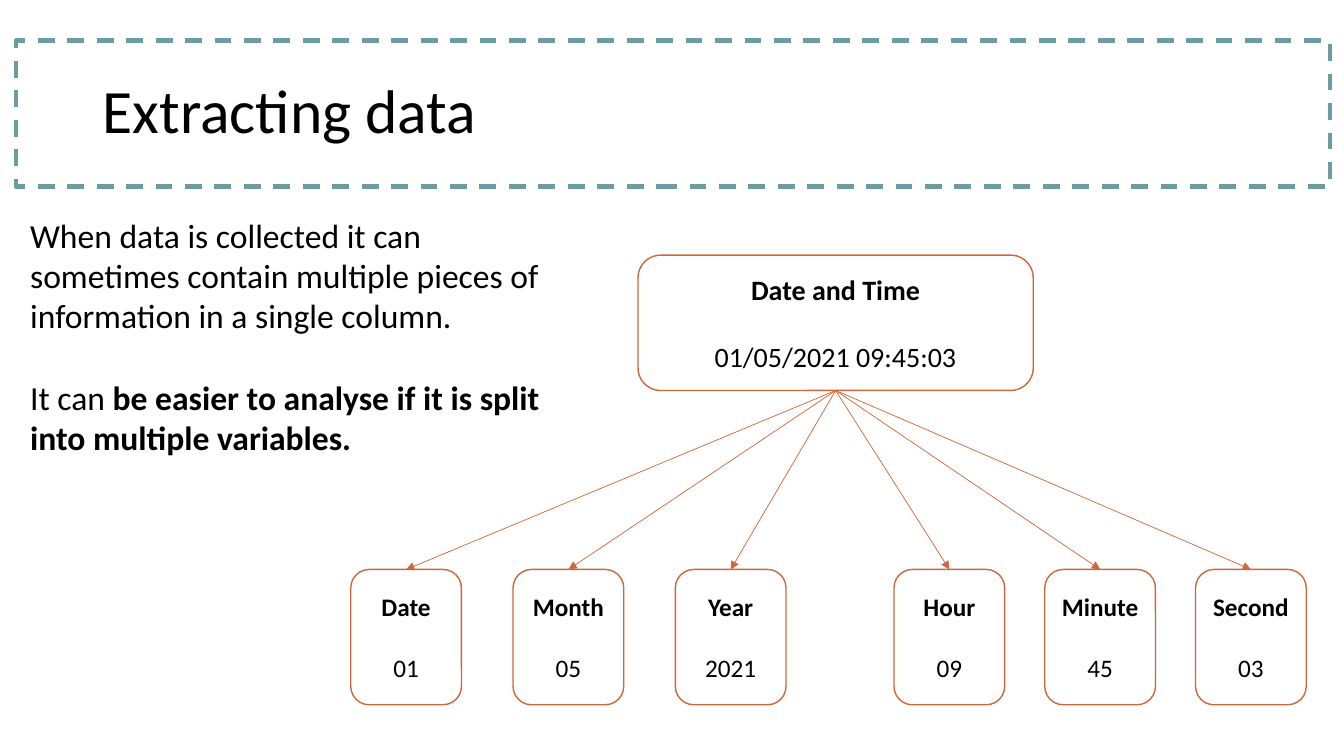
from dataclasses import dataclass

from lxml.etree import SubElement
from pptx import Presentation
from pptx.dml.color import RGBColor
from pptx.enum.dml import MSO_LINE
from pptx.enum.shapes import MSO_CONNECTOR, MSO_SHAPE
from pptx.enum.text import MSO_ANCHOR, MSO_AUTO_SIZE, PP_ALIGN
from pptx.oxml.ns import qn
from pptx.shapes.autoshape import Shape
from pptx.slide import Slide
from pptx.text.text import Font
from pptx.util import Cm, Pt

FONT = "Calibri"
BLACK = RGBColor(0x00, 0x00, 0x00)
WHITE = RGBColor(0xFF, 0xFF, 0xFF)
TEAL = RGBColor(0x6A, 0x9C, 0xA1)
ORANGE = RGBColor(0xCE, 0x67, 0x3B)

LINE_HEIGHT = 1.22
BOX_HEIGHT = 3.41
FIELD_TOP = 14.35
FIELD_WIDTH = 2.79
BANNER_TOP = 1.02
BANNER_HEIGHT = 3.68


@dataclass
class Box:
    heading: str
    value: str
    left: float
    top: float
    width: float
    size: int


@dataclass
class Group:
    left: float
    step: float
    fields: list[tuple[str, str]]


SOURCE = Box("Date and Time", "01/05/2021 09:45:03", 16.08, 6.43, 9.96, 20)
GROUPS = [
    Group(8.84, 4.09, [("Date", "01"), ("Month", "05"), ("Year", "2021")]),
    Group(22.53, 3.8, [("Hour", "09"), ("Minute", "45"), ("Second", "03")]),
]


def format_font(font: Font, size: int, bold: bool = False) -> None:
    font.name = FONT
    font.size = Pt(size)
    font.bold = bold
    font.color.rgb = BLACK


def add_banner(slide: Slide) -> None:
    sp = slide.shapes.add_shape(
        MSO_SHAPE.RECTANGLE, Cm(0.41), Cm(BANNER_TOP), Cm(33.1), Cm(BANNER_HEIGHT)
    )
    sp.shadow.inherit = False
    sp.fill.background()
    sp.line.color.rgb = TEAL
    sp.line.width = Pt(3)
    sp.line.dash_style = MSO_LINE.DASH


def format_title(slide: Slide) -> None:
    title = slide.shapes.title
    title.left, title.top = Cm(2.33), Cm(BANNER_TOP)
    title.width, title.height = Cm(29.21), Cm(BANNER_HEIGHT)
    tf = title.text_frame
    tf.text = "Extracting data"
    tf.vertical_anchor = MSO_ANCHOR.MIDDLE
    p = tf.paragraphs[0]
    p.alignment = PP_ALIGN.LEFT
    p.line_spacing = 0.9
    format_font(p.runs[0].font, 44)


def add_explanation(slide: Slide) -> None:
    size = 24
    sp = slide.shapes.add_textbox(Cm(0.51), Cm(5.28), Cm(13.46), Cm(7.26))
    tf = sp.text_frame
    tf.word_wrap = True
    tf.auto_size = MSO_AUTO_SIZE.SHAPE_TO_FIT_TEXT
    tf.text = (
        "When data is collected it can sometimes contain multiple pieces of "
        "information in a single column."
    )
    format_font(tf.paragraphs[0].runs[0].font, size)
    p = tf.add_paragraph()
    p.space_before = Pt(size * LINE_HEIGHT)
    for text, bold in (
        ("It can ", False),
        ("be easier to analyse if it is split into multiple variables.", True),
    ):
        r = p.add_run()
        r.text = text
        format_font(r.font, size, bold)


def add_box(slide: Slide, box: Box) -> Shape:
    sp = slide.shapes.add_shape(
        MSO_SHAPE.ROUNDED_RECTANGLE,
        Cm(box.left), Cm(box.top), Cm(box.width), Cm(BOX_HEIGHT),
    )
    sp.shadow.inherit = False
    sp.fill.solid()
    sp.fill.fore_color.rgb = WHITE
    sp.line.color.rgb = ORANGE
    sp.line.width = Pt(1)
    tf = sp.text_frame
    tf.vertical_anchor = MSO_ANCHOR.MIDDLE
    tf.text = f"{box.heading}\n{box.value}"
    heading, value = tf.paragraphs
    value.space_before = Pt(box.size * LINE_HEIGHT)
    for p, bold in ((heading, True), (value, False)):
        p.alignment = PP_ALIGN.CENTER
        format_font(p.runs[0].font, box.size, bold)
    return sp


def add_arrow(slide: Slide, start: Shape, end: Shape) -> None:
    arrow = slide.shapes.add_connector(MSO_CONNECTOR.STRAIGHT, 0, 0, 0, 0)
    arrow.begin_connect(start, 2)
    arrow.end_connect(end, 0)
    arrow.line.color.rgb = ORANGE
    arrow.line.width = Pt(0.5)
    sp_pr = arrow._element.spPr
    SubElement(sp_pr.find(qn("a:ln")), qn("a:tailEnd"), type="triangle")
    SubElement(sp_pr, qn("a:effectLst"))


def main() -> None:
    prs = Presentation()
    prs.slide_width, prs.slide_height = Cm(33.87), Cm(19.05)
    slide = prs.slides.add_slide(prs.slide_layouts[5])
    add_banner(slide)
    format_title(slide)
    add_explanation(slide)
    source = add_box(slide, SOURCE)
    fields = [
        add_box(
            slide,
            Box(heading, value, group.left + i * group.step, FIELD_TOP, FIELD_WIDTH, 18),
        )
        for group in GROUPS
        for i, (heading, value) in enumerate(group.fields)
    ]
    for field in fields:
        add_arrow(slide, source, field)
    prs.save("out.pptx")


if __name__ == "__main__":
    main()
